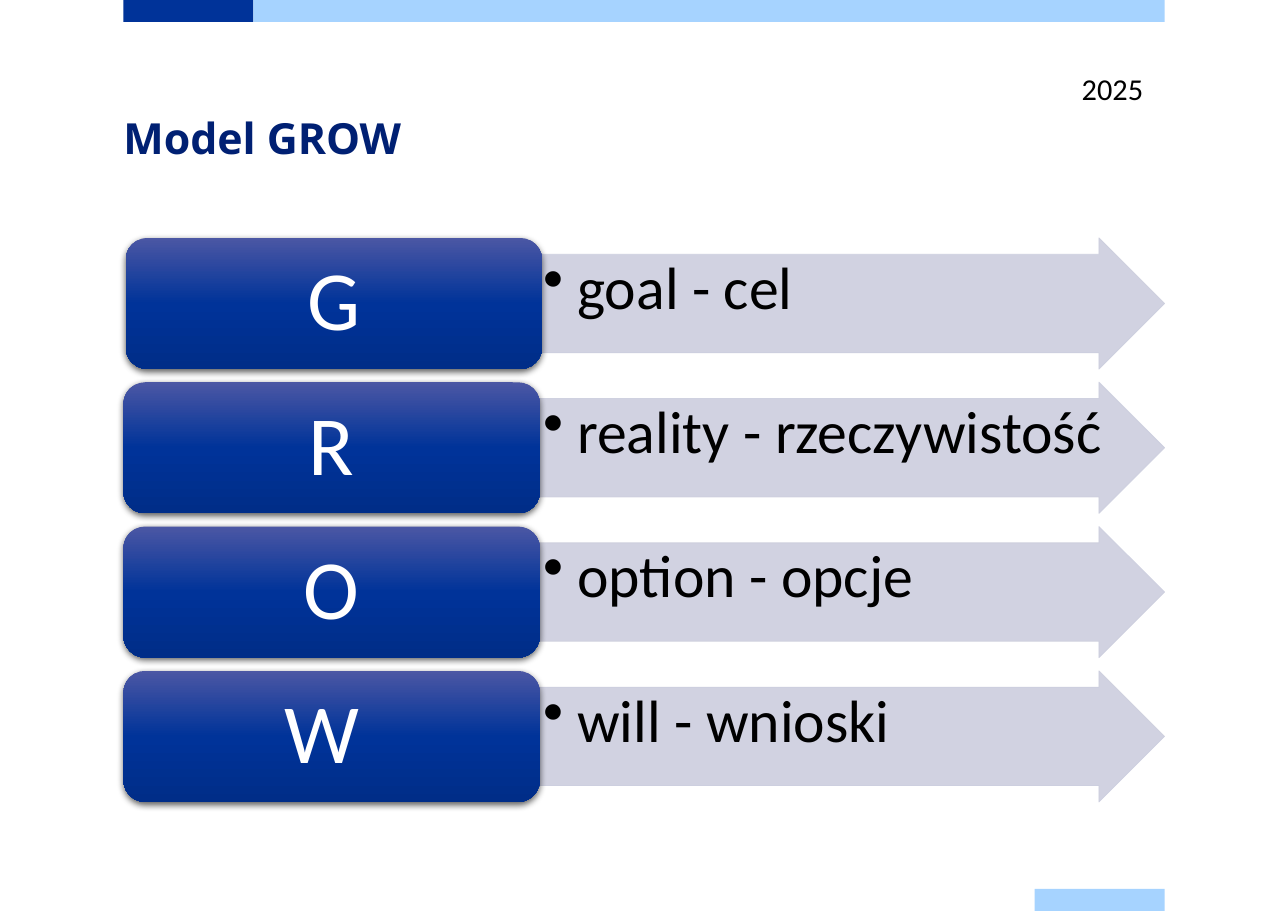
from dataclasses import dataclass

from pptx import Presentation
from pptx import util as u
from pptx.dml.color import RGBColor
from pptx.enum import shapes, text
from pptx.oxml import parse_xml
from pptx.oxml.ns import nsdecls, qn


@dataclass(frozen=True)
class Theme:
    navy: str = "003399"
    sky: str = "A6D3FF"
    title: str = "002073"
    arrow: str = "CCCEDE"
    arrow_alpha: int = 90
    ink: str = "000000"
    white: str = "FFFFFF"
    gradient: tuple = ((0, "4B57A4"), (50, "003399"), (100, "002D88"))
    title_font: str = "Open Sans"
    body_font: str = "Calibri"
    title_size: float = 28
    letter_size: float = 55
    meaning_size: float = 39
    year_size: float = 19.8


class GrowSlide:
    def __init__(self, presentation, theme):
        self.theme = theme
        self.slide = presentation.slides.add_slide(presentation.slide_layouts[5])

    def set_text(self, shape, words, size, color, font=None, bold=False,
                 align=text.PP_ALIGN.LEFT, anchor=text.MSO_ANCHOR.TOP, insets=None):
        """Set one formatted paragraph; insets are (horizontal, vertical) inches."""
        frame = shape.text_frame
        frame.text = words
        frame.word_wrap = True
        frame.auto_size = text.MSO_AUTO_SIZE.NONE
        frame.vertical_anchor = anchor
        if insets:
            frame.margin_left = frame.margin_right = u.Inches(insets[0])
            frame.margin_top = frame.margin_bottom = u.Inches(insets[1])
        paragraph = frame.paragraphs[0]
        paragraph.alignment = align
        run_font = paragraph.runs[0].font
        run_font.name = font or self.theme.body_font
        run_font.size = u.Pt(size)
        run_font.bold = bold
        run_font.color.rgb = RGBColor.from_string(color)
        return paragraph

    def title(self, words, *box):
        shape = self.slide.shapes.title
        shape.left, shape.top, shape.width, shape.height = map(u.Inches, box)
        paragraph = self.set_text(shape, words, self.theme.title_size, self.theme.title,
                                  self.theme.title_font, bold=True, insets=(0, 0))
        paragraph.line_spacing = u.Pt(36)

    def label(self, words, *box):
        shape = self.slide.shapes.add_textbox(*map(u.Inches, box))
        self.set_text(shape, words, self.theme.year_size, self.theme.ink)

    def preset(self, kind, color, *box):
        """Add a flat shape without outline or shadow."""
        shape = self.slide.shapes.add_shape(kind, *map(u.Inches, box))
        shape.shadow.inherit = False
        shape.fill.solid()
        shape.fill.fore_color.rgb = RGBColor.from_string(color)
        shape.line.fill.background()
        return shape

    def bar(self, color, *box):
        self.preset(shapes.MSO_SHAPE.RECTANGLE, color, *box)

    def meaning_arrow(self, words, *box):
        shape = self.preset(shapes.MSO_SHAPE.RIGHT_ARROW, self.theme.arrow, *box)
        shape.adjustments[0], shape.adjustments[1] = 0.75, 0.5
        shape.line.color.rgb = RGBColor.from_string(self.theme.arrow)
        shape.line.width = u.Pt(0.5)
        for color in shape._element.spPr.iter(qn("a:srgbClr")):
            color.append(parse_xml(
                f'<a:alpha {nsdecls("a")} val="{self.theme.arrow_alpha * 1000}"/>'))
        paragraph = self.set_text(shape, words, self.theme.meaning_size, self.theme.ink,
                                  insets=(0.03, 0.03))
        paragraph.line_spacing = 0.9
        properties = paragraph._p.get_or_add_pPr()
        indent = u.Inches(0.31)
        properties.set("marL", str(indent))
        properties.set("indent", str(-indent))
        properties.append(parse_xml(f'<a:buChar {nsdecls("a")} char="•"/>'))

    def letter_tile(self, letter, *box):
        shape = self.preset(shapes.MSO_SHAPE.ROUNDED_RECTANGLE, self.theme.navy, *box)
        stops = "".join(f'<a:gs pos="{position * 1000}"><a:srgbClr val="{color}"/></a:gs>'
                        for position, color in self.theme.gradient)
        properties = shape._element.spPr
        properties.replace(properties.find(qn("a:solidFill")), parse_xml(
            f'<a:gradFill {nsdecls("a")} rotWithShape="1"><a:gsLst>{stops}</a:gsLst>'
            '<a:lin ang="5400000" scaled="0"/></a:gradFill>'))
        properties.find(qn("a:effectLst")).append(parse_xml(
            f'<a:outerShdw {nsdecls("a")} blurRad="{u.Pt(4.5)}" dist="{u.Pt(1.5)}" '
            f'dir="5400000" rotWithShape="0"><a:srgbClr val="{self.theme.ink}">'
            '<a:alpha val="63000"/></a:srgbClr></a:outerShdw>'))
        paragraph = self.set_text(shape, letter, self.theme.letter_size, self.theme.white,
                                  align=text.PP_ALIGN.CENTER,
                                  anchor=text.MSO_ANCHOR.MIDDLE, insets=(0.23, 0.11))
        paragraph.line_spacing = 0.9


def main():
    presentation = Presentation()
    presentation.slide_width = u.Inches(11.69)
    presentation.slide_height = u.Inches(8.27)
    theme = Theme()
    grow = GrowSlide(presentation, theme)

    grow.bar(theme.navy, 1.12, 0, 1.18, 0.2)
    grow.bar(theme.sky, 2.3, 0, 8.27, 0.2)
    grow.bar(theme.sky, 9.39, 8.07, 1.18, 0.2)
    grow.title("Model GROW", 1.12, 0.98, 9.45, 1.18)

    steps = (("G", "goal - cel"), ("R", "reality - rzeczywistość"),
             ("O", "option - opcje"), ("W ", "will - wnioski"))
    first_top, pitch, height = 2.16, 1.31, 1.19
    for row, (letter, meaning) in enumerate(steps):
        top = first_top + row * pitch
        tile_left = 1.14 if row == 0 else 1.12
        grow.meaning_arrow(meaning, 4.9, top, 5.67, height)
        grow.letter_tile(letter, tile_left, top, 3.78, height)

    grow.label("2025", 9.72, 0.59, 1.97, 0.4)
    presentation.save("out.pptx")


if __name__ == "__main__":
    main()
